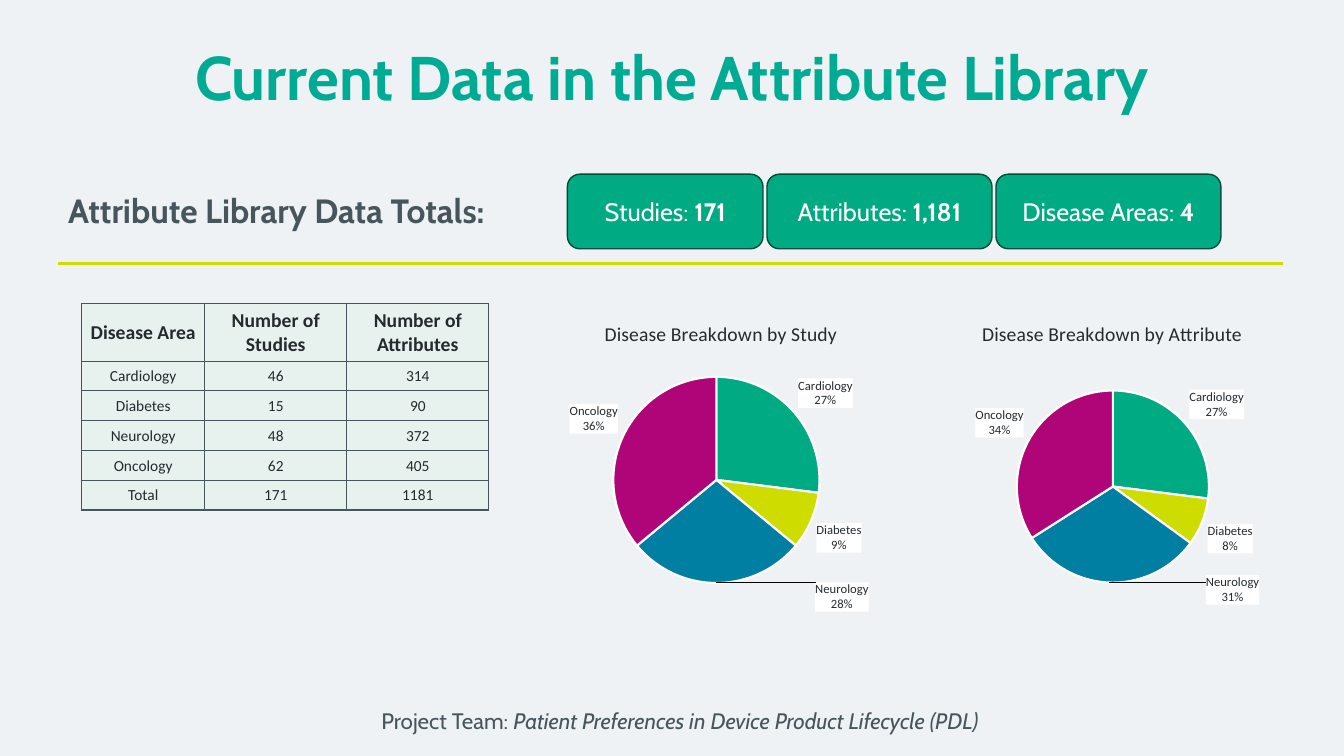
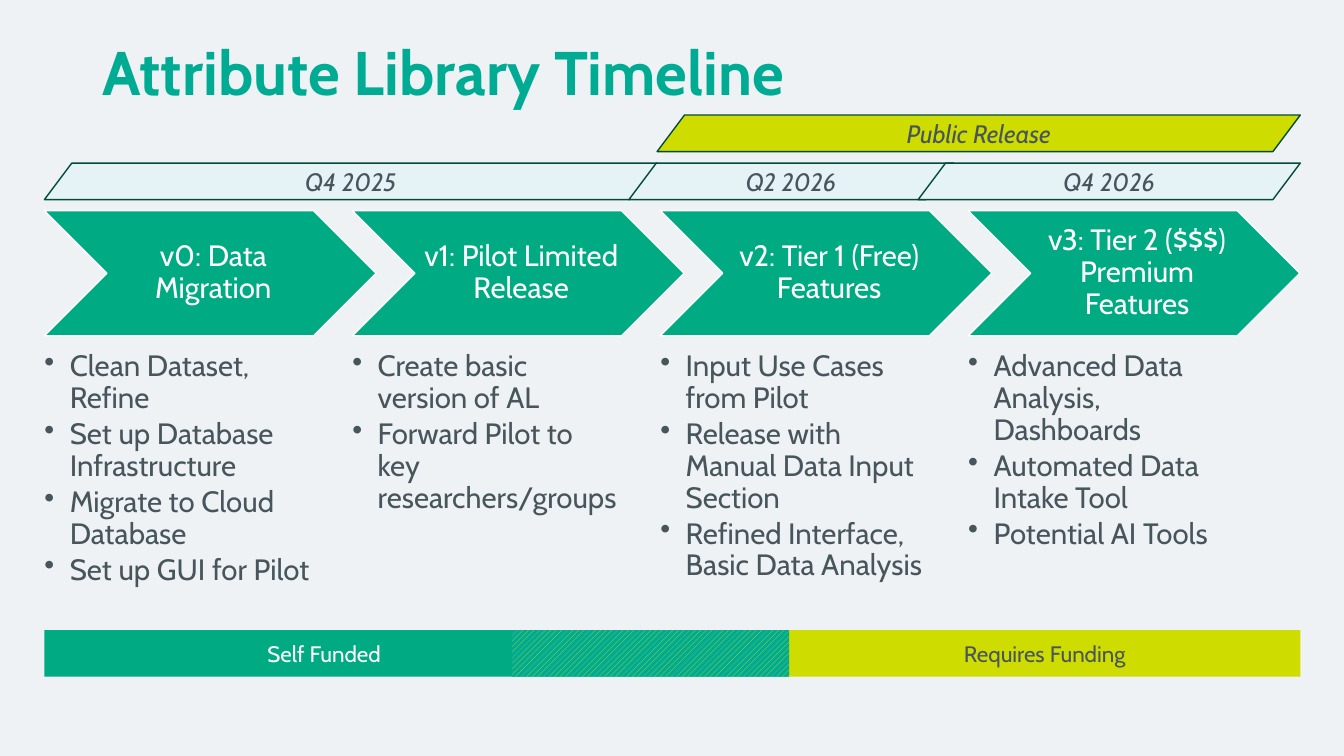
from copy import deepcopy
from dataclasses import dataclass

from lxml import etree
from pptx import Presentation
from pptx.chart.data import CategoryChartData
from pptx.dml.color import RGBColor
from pptx.enum import chart as ch, dml, shapes, text
from pptx.oxml import parse_xml
from pptx.oxml.ns import nsdecls, qn
from pptx.util import Cm, Pt


@dataclass(frozen=True)
class Theme:
    background: str = "EFF2F4"
    title: str = "00AB94"
    body: str = "47555D"
    ink: str = "242A2E"
    white: str = "FFFFFF"
    green: str = "00AB83"
    lime: str = "CEDC00"
    blue: str = "007FA3"
    magenta: str = "AF0578"
    outline: str = "004B39"
    pale_blue: str = "E5F2F6"
    pale_green: str = "E7F1ED"
    font: str = "Cabin"
    data_font: str = "Calibri"
    title_pt: int = 44
    heading_pt: int = 24
    step_pt: int = 21
    label_pt: int = 18
    note_pt: int = 16
    data_head_pt: int = 14
    data_pt: int = 11
    slice_pt: int = 9


T = Theme()
CENTER = text.PP_ALIGN.CENTER
MIDDLE = text.MSO_ANCHOR.MIDDLE
SHAPE = shapes.MSO_SHAPE


# ---- Shared helpers ----
def rgb(color):
    return RGBColor.from_string(color)


def style_font(font, size, color, name=T.font, bold=False, italic=False):
    font.size, font.name, font.bold, font.italic = Pt(size), name, bold, italic
    font.color.rgb = rgb(color)


def set_margins(frame, left, top, right, bottom):
    frame.margin_left, frame.margin_top = Cm(left), Cm(top)
    frame.margin_right, frame.margin_bottom = Cm(right), Cm(bottom)


def write(tf, content, size, color, align=CENTER, **style):
    tf.word_wrap = True
    p = tf.paragraphs[0]
    p.text = content
    p.alignment = align
    style_font(p.font, size, color, **style)
    return p


def add_run(p, content, bold=None, italic=None):
    r = p.add_run()
    r.text = content
    r.font.bold, r.font.italic = bold, italic


def add_text(slide, box, content, size, color, **style):
    tf = slide.shapes.add_textbox(*map(Cm, box)).text_frame
    return write(tf, content, size, color, **style)


def add_block(slide, kind, box, fill=None, line=None):
    sp = slide.shapes.add_shape(kind, *map(Cm, box))
    sp.shadow.inherit = False
    if fill:
        sp.fill.solid()
        sp.fill.fore_color.rgb = rgb(fill)
    if line:
        sp.line.color.rgb = rgb(line)
        sp.line.width = Pt(1)
    else:
        sp.line.fill.background()
    sp.text_frame.vertical_anchor = MIDDLE
    return sp


def new_slide(prs, title, box, align):
    slide = prs.slides.add_slide(prs.slide_layouts[6])
    slide.background.fill.solid()
    slide.background.fill.fore_color.rgb = rgb(T.background)
    p = add_text(slide, box, title, T.title_pt, T.title, align=align, bold=True)
    p.line_spacing = 0.9
    slide.shapes[0].text_frame.vertical_anchor = MIDDLE
    return slide


# ---- Data slide regions ----
def add_totals(slide, box, totals):
    left, top, width, height = box
    add_text(slide, (left, top + 0.28, 12.73, 1.27), "Attribute Library Data Totals:",
             T.heading_pt, T.body, align=text.PP_ALIGN.LEFT, bold=True)
    x = left + 12.83
    for label, value, card_width in totals:
        sp = add_block(slide, SHAPE.ROUNDED_RECTANGLE, (x, top, card_width, height - 0.36),
                       T.green, T.outline)
        p = write(sp.text_frame, label + " ", T.label_pt, T.white)
        add_run(p, value, bold=True)
        x += card_width + 0.1
    # Rule below the cards
    y = Cm(top + height)
    rule = slide.shapes.add_connector(shapes.MSO_CONNECTOR.STRAIGHT,
                                      Cm(left), y, Cm(left + width), y)
    rule.line.color.rgb = rgb(T.lime)
    rule.line.width = Pt(2.25)
    etree.SubElement(rule._element.spPr, qn("a:effectLst"))


def style_cell(cell, content, size, bold):
    set_margins(cell, 0.03, 0.03, 0.03, 0)
    cell.vertical_anchor = MIDDLE
    write(cell.text_frame, content, size, T.ink, name=T.data_font, bold=bold)
    tc_pr = cell._tc.get_or_add_tcPr()
    for side in ("lnL", "lnR", "lnT", "lnB"):
        tc_pr.append(parse_xml(
            f'<a:{side} {nsdecls("a")} w="12700"><a:solidFill><a:srgbClr val="{T.body}"/>'
            f'</a:solidFill></a:{side}>'))
    cell.fill.solid()
    cell.fill.fore_color.rgb = rgb(T.pale_green)


def add_disease_table(slide, box, rows):
    table = slide.shapes.add_table(len(rows), len(rows[0]), *map(Cm, box)).table
    table.first_row = table.horz_banding = False
    for column, width in zip(table.columns, (3.1, 3.58, 3.58)):
        column.width = Cm(width)
    for i, row in enumerate(rows):
        table.rows[i].height = Cm(0.75 if i else 1.45)
        for j, content in enumerate(row):
            style_cell(table.cell(i, j), str(content),
                       T.data_pt if i else T.data_head_pt, not i)


def set_layout(parent, index, target=None, edge=True, **lengths):
    """Place a chart part by fractions of the chart's size."""
    for old in parent.findall(qn("c:layout")):
        parent.remove(old)
    values = {"layoutTarget": target} if target else {}
    if edge:
        values.update(xMode="edge", yMode="edge")
    values.update(lengths)
    parts = "".join(f'<c:{key} val="{value}"/>' for key, value in values.items())
    parent.insert(index, parse_xml(
        f'<c:layout {nsdecls("c")}><c:manualLayout>{parts}</c:manualLayout></c:layout>'))


def label_slices(series, moved_slice, offset):
    labels = series.data_labels
    labels.show_value = False
    labels.show_category_name = labels.show_percentage = True
    labels.number_format, labels.number_format_is_linked = "0%", False
    labels.position = ch.XL_LABEL_POSITION.OUTSIDE_END
    style_font(labels.font, T.slice_pt, T.ink, T.data_font)
    el = labels._element
    el.find(qn("c:txPr")).addprevious(parse_xml(
        f'<c:spPr {nsdecls("c", "a")}><a:solidFill><a:srgbClr val="{T.white}"/>'
        '</a:solidFill></c:spPr>'))
    separator = etree.Element(qn("c:separator"))
    separator.text = "\n"
    el.find(qn("c:showBubbleSize")).addnext(separator)
    # One label is moved beside its slice
    moved = parse_xml(f'<c:dLbl {nsdecls("c")}><c:idx val="{moved_slice}"/></c:dLbl>')
    for child in el:
        if child.tag != qn("c:showLeaderLines"):
            moved.append(deepcopy(child))
    set_layout(moved, 1, edge=False, x=offset[0], y=offset[1])
    el.insert(0, moved)


def add_pie(slide, box, title, title_x, values, plot, offset):
    data = CategoryChartData()
    data.categories = ["Cardiology", "Diabetes", "Neurology", "Oncology"]
    data.add_series("Series 1", values)
    chart = slide.shapes.add_chart(ch.XL_CHART_TYPE.PIE, *map(Cm, box), data).chart
    style_font(chart.font, 10, T.ink, T.data_font)
    chart.has_legend = False
    chart.has_title = True
    write(chart.chart_title.text_frame, title, T.data_head_pt, T.ink, name=T.data_font)
    set_layout(chart.chart_title._element, 1, x=title_x, y=0.05)
    x, y, w, h = plot
    set_layout(chart._chartSpace.chart.plotArea, 0, "inner", x=x, y=y, w=w, h=h)
    chart.plots[0].vary_by_categories = True
    series = chart.plots[0].series[0]
    for i, color in enumerate((T.green, T.lime, T.blue, T.magenta)):
        fmt = series.points[i].format
        fmt.fill.solid()
        fmt.fill.fore_color.rgb = rgb(color)
        fmt.line.color.rgb = rgb(T.white)
        fmt.line.width = Pt(1.5)
    label_slices(series, 2, offset)


def data_slide(prs):
    slide = new_slide(prs, "Current Data in the Attribute Library",
                      (2.34, 0.18, 29.2, 3.68), CENTER)
    add_totals(slide, (1.47, 4.39, 30.86, 2.24),
               [("Studies:", "171", 4.93), ("Attributes:", "1,181", 5.67),
                ("Disease Areas:", "4", 5.67)])
    add_disease_table(slide, (2.06, 7.65, 10.26, 5.2), [
        ("Disease Area", "Number of Studies", "Number of Attributes"),
        ("Cardiology", 46, 314),
        ("Diabetes", 15, 90),
        ("Neurology", 48, 372),
        ("Oncology", 62, 405),
        ("Total", 171, 1181)])
    add_pie(slide, (23.11, 7.57, 9.68, 8.38), "Disease Breakdown by Attribute", 0.16,
            (27, 8, 31, 34), (0.26, 0.27, 0.5, 0.58), (0.32, -0.04))
    add_pie(slide, (11.73, 7.57, 12.65, 8.38), "Disease Breakdown by Study", 0.27,
            (27, 9, 28, 36), (0.29, 0.23, 0.42, 0.62), (0.25, -0.02))
    # Footer
    p = add_text(slide, (7.49, 17.7, 19.3, 0.94), "Project Team: ", T.note_pt, T.body)
    add_run(p, "Patient Preferences in Device Product Lifecycle (PDL)", italic=True)


# ---- Timeline slide regions ----
def add_period(slide, box, label, fill):
    sp = add_block(slide, SHAPE.PARALLELOGRAM, box, fill, T.outline)
    sp.adjustments[0] = 0.75
    write(sp.text_frame, label, T.label_pt, T.body, italic=True)


def add_step(slide, box, label, tasks):
    left, top, width, height = box
    sp = add_block(slide, SHAPE.CHEVRON, (left, top, width, 3.15), T.green, T.white)
    set_margins(sp.text_frame, 0.23, 0.08, 0.08, 0.08)
    write(sp.text_frame, label, T.step_pt, T.white).line_spacing = 0.9
    # Bulleted tasks
    tf = slide.shapes.add_textbox(Cm(left), Cm(top + 3.55), Cm(6.68),
                                  Cm(height - 3.55)).text_frame
    tf.word_wrap = True
    set_margins(tf, 0, 0, 0, 0)
    for i, task in enumerate(tasks):
        p = tf.add_paragraph() if i else tf.paragraphs[0]
        p.text = task
        p.line_spacing, p.space_after = 0.9, Pt(3)
        p_pr = p._p.get_or_add_pPr()
        p_pr.set("marL", str(Cm(0.64)))
        p_pr.set("indent", str(-Cm(0.64)))
        etree.SubElement(p_pr, qn("a:buChar")).set("char", "•")
        style_font(p.font, T.step_pt, T.body)


def add_funding_bar(slide, box):
    left, top, width, height = box
    split, overlap = 18.77, 6.98
    own = add_block(slide, SHAPE.RECTANGLE, (left, top, split, height), T.green)
    own.text_frame.margin_right = Cm(4.92)
    write(own.text_frame, "Self Funded", T.note_pt, T.white)
    needed = add_block(slide, SHAPE.RECTANGLE,
                       (left + split, top, width - split, height), T.lime)
    write(needed.text_frame, "Requires Funding", T.note_pt, T.body)
    # Hatched transition
    fill = add_block(slide, SHAPE.RECTANGLE,
                     (left + split - overlap, top, overlap, height)).fill
    fill.patterned()
    fill.pattern = dml.MSO_PATTERN.WIDE_UPWARD_DIAGONAL
    fill.fore_color.rgb = rgb(T.lime)
    fill.back_color.rgb = rgb(T.title)


def timeline_slide(prs):
    slide = new_slide(prs, "Attribute Library Timeline",
                      (2.34, 1.02, 29.2, 1.78), text.PP_ALIGN.LEFT)
    left, pitch = 1.12, 7.76
    steps = [
        ("v0: Data Migration",
         ["Clean Dataset, Refine", "Set up Database Infrastructure",
          "Migrate to Cloud Database", "Set up GUI for Pilot"]),
        ("v1: Pilot Limited Release",
         ["Create basic version of AL", "Forward Pilot to key researchers/groups"]),
        ("v2: Tier 1 (Free) Features",
         ["Input Use Cases from Pilot", "Release with Manual Data Input Section",
          "Refined Interface, Basic Data Analysis"]),
        ("v3: Tier 2 ($$$) Premium Features",
         ["Advanced Data Analysis, Dashboards", "Automated Data Intake Tool",
          "Potential AI Tools"]),
    ]
    for i, (label, tasks) in enumerate(steps):
        add_step(slide, (left + i * pitch, 5.31, 8.36, 9.85), label, tasks)
    # Release periods
    add_period(slide, (16.56, 2.9, 16.21, 0.92), "Public Release", T.lime)
    for x, width, label in [(left, 15.44, "Q4 2025"), (15.85, 8.18, "Q2 2026"),
                            (23.14, 9.63, "Q4 2026")]:
        add_period(slide, (x, 4.11, width, 0.92), label, T.pale_blue)
    add_funding_bar(slide, (left, 15.88, 31.65, 1.17))


def main():
    prs = Presentation()
    prs.slide_width, prs.slide_height = Cm(33.87), Cm(19.05)
    data_slide(prs)
    timeline_slide(prs)
    prs.save("out.pptx")


if __name__ == "__main__":
    main()
